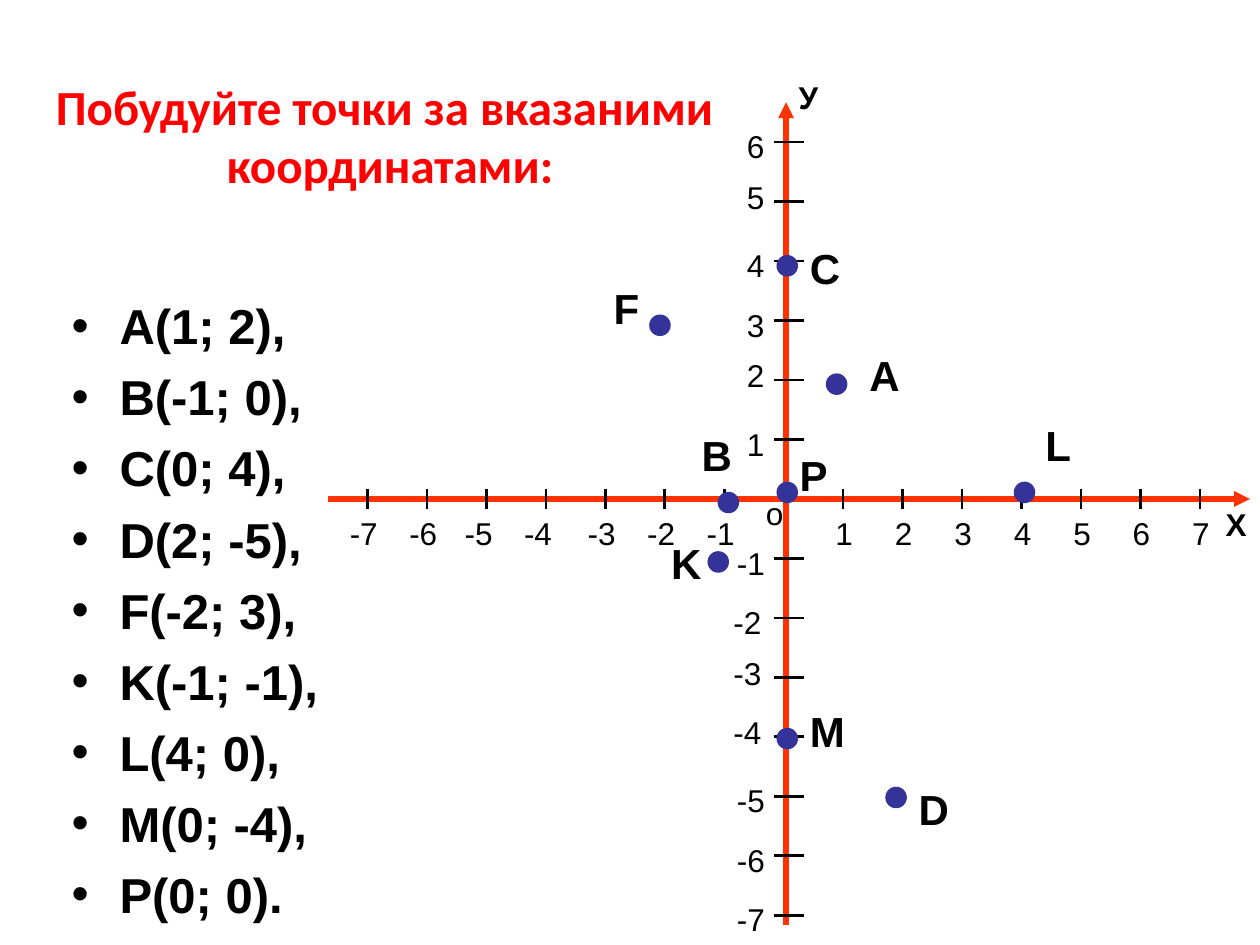
from pptx import Presentation
from pptx.dml.color import RGBColor
from pptx.enum.shapes import MSO_CONNECTOR, MSO_SHAPE
from pptx.enum.text import MSO_ANCHOR, MSO_AUTO_SIZE, PP_ALIGN
from pptx.oxml.ns import qn
from pptx.util import Inches, Pt
from lxml.etree import SubElement

COLORS = {"axis": "FF3300", "ink": "000000", "title": "FF0000", "dot": "333399"}
FONTS = {
    "number": {"name": "Arial", "size": Pt(18), "bold": False},
    "axis": {"name": "Arial", "size": Pt(18), "bold": True},
    "letter": {"name": "Arial", "size": Pt(24), "bold": True},
    "task": {"name": "Arial", "size": Pt(28), "bold": True},
    "title": {"name": "Calibri", "size": Pt(28), "bold": True},
}
UNIT, ORIGIN_X, ORIGIN_Y = 0.472, 6.22, 3.96
TEXT_ROWS = 0.85


class CoordinateSlide:
    def __init__(self, deck):
        self.slide = deck.slides.add_slide(deck.slide_layouts[6])
        self.canvas = self.slide.shapes

    def place(self, col, row):
        return Inches(ORIGIN_X + col * UNIT), Inches(ORIGIN_Y - row * UNIT)

    def span(self, cols, rows):
        return Inches(cols * UNIT), Inches(rows * UNIT)

    def color(self, name):
        return RGBColor.from_string(COLORS[name])

    def line(self, start, end, color, width, arrow=False):
        stroke = self.canvas.add_connector(
            MSO_CONNECTOR.STRAIGHT, *self.place(*start), *self.place(*end))
        stroke.line.color.rgb = self.color(color)
        stroke.line.width = Pt(width)
        if arrow:
            SubElement(stroke.line._get_or_add_ln(), qn("a:tailEnd"), type="triangle")
        SubElement(stroke._element.spPr, qn("a:effectLst"))

    def text(self, lines, col, row, cols, rows, font, color="ink", bullets=False,
             frame_format=None, paragraph_format=None):
        box = self.canvas.add_textbox(*self.place(col, row), *self.span(cols, rows))
        frame = box.text_frame
        frame_values = {"word_wrap": False, "auto_size": MSO_AUTO_SIZE.SHAPE_TO_FIT_TEXT}
        for key, value in (frame_values | (frame_format or {})).items():
            setattr(frame, key, value)
        for index, words in enumerate(lines):
            paragraph = frame.add_paragraph() if index else frame.paragraphs[0]
            for key, value in (paragraph_format or {}).items():
                setattr(paragraph, key, value)
            if bullets:
                paragraph.space_before = Pt(7 if index else 0)
                properties = paragraph._p.get_or_add_pPr()
                properties.set("marL", str(Inches(0.38)))
                properties.set("indent", str(-Inches(0.38)))
                SubElement(properties, qn("a:buFont"), typeface="Arial")
                SubElement(properties, qn("a:buChar"), char="•")
            run = paragraph.add_run()
            run.text = words
            for key, value in FONTS[font].items():
                setattr(run.font, key, value)
            run.font.color.rgb = self.color(color)

    def number(self, value, col, row):
        cols = 0.72 if value > 0 else 0.89
        self.text([str(value)], col - cols / 2, row + TEXT_ROWS / 2, cols, TEXT_ROWS, "number")

    def dot(self, col, row, size=0.34):
        point = self.canvas.add_shape(
            MSO_SHAPE.OVAL, *self.place(col - size / 2, row + size / 2), *self.span(size, size))
        point.shadow.inherit = False
        point.fill.solid()
        point.fill.fore_color.rgb = self.color("dot")
        point.line.color.rgb = self.color("dot")
        point.line.width = Pt(0.75)

    def plane(self):
        self.canvas = self.slide.shapes.add_group_shape().shapes
        self.line((-7.67, 0), (7.84, 0), "axis", 3, arrow=True)
        self.line((0.04, -7.16), (0.04, 6.67), "axis", 3, arrow=True)
        self.text(["Х"], 7.22, 0, 0.78, TEXT_ROWS, "axis")
        self.text(["о"], -0.51, 0.19, 0.72, TEXT_ROWS, "number")
        self.text(["У"], 0.04, 7.18, 0.76, TEXT_ROWS, "axis")
        for value in range(-7, 8):
            if value == 0:
                continue
            self.line((value, 0.17), (value, -0.17), "ink", 1.5)
            shift = 0.02 if value > 0 else -0.13 if value in (-4, -5) else -0.06
            self.number(value, value + shift, -0.57)
            if value < 7:
                self.line((-0.17, value), (0.34, value), "ink", 1.5)
                col = -0.47 if value > 0 else -0.61 if value in (-2, -3, -4) else -0.55
                lift = 0.08 if value in (2, 5, -3, -4) else -0.07
                self.number(value, col, value + lift)
        self.canvas = self.slide.shapes


TASKS = ["А(1; 2),", "В(-1; 0),", "С(0; 4),", "D(2; -5),", "F(-2; 3),",
         "K(-1; -1),", "L(4; 0),", "M(0; -4),", "P(0; 0)."]
LETTERS = [
    ("А", 1.23, 2.61, 0.85), ("В", -1.59, 1.27, 0.83), ("С", 0.23, 4.41, 0.81),
    ("D", 2.06, -4.68, 0.87), ("F", -3.07, 3.75, 0.76), ("K", -2.1, -0.55, 1.17),
    ("L", 4.19, 1.44, 0.72), ("M", 0.23, -3.37, 1.06), ("P", 0.06, 0.93, 0.81),
]
DOTS = [(-2.08, 2.92), (0.06, 3.92), (4.05, 0.11), (0.89, 1.93), (0.06, 0.11),
        (-1.1, -1.06), (0.06, -4.03), (1.89, -5.02), (-0.93, -0.06)]


def main():
    deck = Presentation()
    deck.slide_width, deck.slide_height = Inches(10), Inches(7.5)
    page = CoordinateSlide(deck)
    page.plane()
    page.text(TASKS, -12.18, 3.52, 9.36, 10.49, "task", bullets=True,
              frame_format={"word_wrap": True, "auto_size": MSO_AUTO_SIZE.NONE})
    page.text(["Побудуйте точки за вказаними", " координатами:"],
              -12.52, 7.22, 11.61, 2.2, "title", "title",
              frame_format={"vertical_anchor": MSO_ANCHOR.MIDDLE},
              paragraph_format={"alignment": PP_ALIGN.CENTER})
    for letter, col, row, cols in LETTERS:
        wrap = {"word_wrap": letter == "K"}
        page.text([letter], col, row, cols, 1.08, "letter", frame_format=wrap)
    for col, row in DOTS:
        page.dot(col, row)
    deck.save("out.pptx")


if __name__ == "__main__":
    main()
